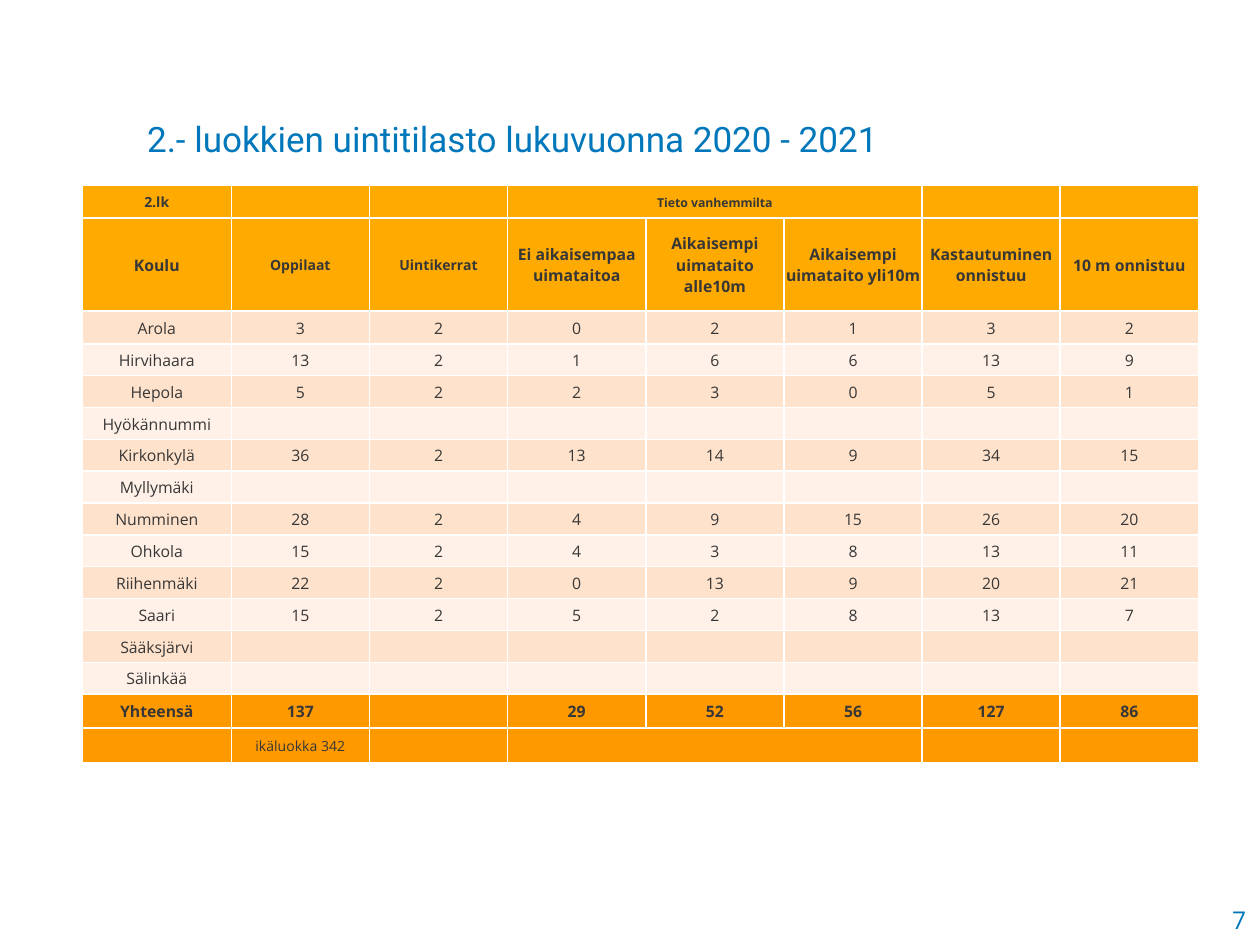
from lxml import etree
from pptx import Presentation
from pptx.dml.color import RGBColor
from pptx.enum.text import MSO_ANCHOR, PP_ALIGN
from pptx.oxml.ns import qn
from pptx.util import Pt

LEFT, CENTER, RIGHT = PP_ALIGN.LEFT, PP_ALIGN.CENTER, PP_ALIGN.RIGHT
TOP, MIDDLE, BOTTOM = MSO_ANCHOR.TOP, MSO_ANCHOR.MIDDLE, MSO_ANCHOR.BOTTOM

BODY_FONT, TITLE_FONT = "Open Sans", "Roboto"
BLUE, INK, WHITE = "0077BB", "373737", "FFFFFF"
HEADER, TOTAL = "FFAA00", "FF9900"
BANDS = ("FFE2CB", "FFF1E7")

HEADINGS = [
    ["2.lk", "", "", "Tieto vanhemmilta", "", "", "", ""],
    ["Koulu", "Oppilaat", "Uintikerrat", "Ei aikaisempaa uimataitoa",
     "Aikaisempi uimataito alle10m", "Aikaisempi uimataito yli10m",
     "Kastautuminen onnistuu", "10 m onnistuu"],
]
SCHOOLS = [
    ["Arola", 3, 2, 0, 2, 1, 3, 2],
    ["Hirvihaara", 13, 2, 1, 6, 6, 13, 9],
    ["Hepola", 5, 2, 2, 3, 0, 5, 1],
    ["Hyökännummi"] + [""] * 7,
    ["Kirkonkylä", 36, 2, 13, 14, 9, 34, 15],
    ["Myllymäki"] + [""] * 7,
    ["Numminen", 28, 2, 4, 9, 15, 26, 20],
    ["Ohkola", 15, 2, 4, 3, 8, 13, 11],
    ["Riihenmäki", 22, 2, 0, 13, 9, 20, 21],
    ["Saari", 15, 2, 5, 2, 8, 13, 7],
    ["Sääksjärvi"] + [""] * 7,
    ["Sälinkää"] + [""] * 7,
]
TOTALS = [
    ["Yhteensä", 137, "", 29, 52, 56, 127, 86],
    ["", "ikäluokka 342", "", "", "", "", "", ""],
]
ROWS = HEADINGS + SCHOOLS + TOTALS
COLUMN_WIDTHS = [85.2] + [78.95] * 7
ROW_HEIGHTS = [18.2, 53.2, 18.8] + [18.2] * 11 + [19.4, 19.6]
SUM_ROW, LAST_ROW = len(ROWS) - 2, len(ROWS) - 1
PARENT_COLUMNS = (3, 4, 5)
SMALL_SIZES = {(0, 0): 8, (0, 3): 7, (1, 1): 8, (1, 2): 8, (LAST_ROW, 1): 8}


def color(value):
    return RGBColor.from_string(value)


def add_span(para, text, font, size, ink, bold=False):
    span = para.add_run()
    span.text = text
    span.font.name = font
    span.font.size = Pt(size)
    span.font.bold = bold
    span.font.color.rgb = color(ink)


def add_text(page, text, left, top, width, height, font, size, align, anchor):
    box = page.shapes.add_textbox(Pt(left), Pt(top), Pt(width), Pt(height))
    frame = box.text_frame
    frame.word_wrap = True
    frame.vertical_anchor = anchor
    para = frame.paragraphs[0]
    para.alignment = align
    add_span(para, text, font, size, BLUE)


def row_fill(row):
    if row < len(HEADINGS):
        return HEADER
    if row >= SUM_ROW:
        return TOTAL
    return BANDS[(row - len(HEADINGS)) % 2]


def border_width(row, column, side):
    in_open_block = row == LAST_ROW and column in PARENT_COLUMNS
    if in_open_block and side == "L" and column != PARENT_COLUMNS[0]:
        return 0
    if in_open_block and side == "R" and column != PARENT_COLUMNS[-1]:
        return 0
    if row == 0 and side == "T":
        return 0
    if row == LAST_ROW and side == "B" and not in_open_block:
        return 0
    return 1.5 if (row, side) in ((1, "B"), (2, "T")) else 1


def add_border(cell, side, width):
    properties = cell._tc.get_or_add_tcPr()
    line = etree.SubElement(properties, qn("a:ln" + side), w=str(Pt(width)))
    if width:
        fill = etree.SubElement(line, qn("a:solidFill"))
        etree.SubElement(fill, qn("a:srgbClr"), val=WHITE)
    else:
        etree.SubElement(line, qn("a:noFill"))


def fill_cell(cell, row, column, value):
    for side in "LRTB":
        add_border(cell, side, border_width(row, column, side))
    cell.fill.solid()
    cell.fill.fore_color.rgb = color(row_fill(row))
    cell.vertical_anchor = MIDDLE
    cell.margin_left = cell.margin_right = cell.margin_top = Pt(0.7)
    cell.margin_bottom = Pt(0)
    para = cell.text_frame.paragraphs[0]
    para.alignment = CENTER
    size = SMALL_SIZES.get((row, column), 9)
    if value == "":
        etree.SubElement(para._p, qn("a:endParaRPr"), sz=str(size * 100))
    else:
        bold = row < len(HEADINGS) or row == SUM_ROW
        add_span(para, str(value), BODY_FONT, size, INK, bold)


def add_statistics(page):
    frame = page.shapes.add_table(
        len(ROWS), len(COLUMN_WIDTHS), Pt(47), Pt(106.3),
        Pt(sum(COLUMN_WIDTHS)), Pt(sum(ROW_HEIGHTS)))
    table = frame.table
    table.first_row = False
    table.horz_banding = False
    for column, width in zip(table.columns, COLUMN_WIDTHS):
        column.width = Pt(width)
    for row, height in zip(table.rows, ROW_HEIGHTS):
        row.height = Pt(height)
    for row, values in enumerate(ROWS):
        for column, value in enumerate(values):
            fill_cell(table.cell(row, column), row, column, value)
    table.cell(0, PARENT_COLUMNS[0]).merge(table.cell(0, PARENT_COLUMNS[-1]))


def main():
    deck = Presentation()
    deck.slide_width, deck.slide_height = Pt(720), Pt(540)
    page = deck.slides.add_slide(deck.slide_layouts[6])
    add_text(page, "7", 674.6, 513.4, 44.6, 24.5, BODY_FONT, 14, RIGHT, TOP)
    add_text(page, "2.- luokkien uintitilasto lukuvuonna 2020 - 2021",
             77, 59.8, 535, 34.6, TITLE_FONT, 20, LEFT, BOTTOM)
    add_statistics(page)
    deck.save("out.pptx")


if __name__ == "__main__":
    main()
